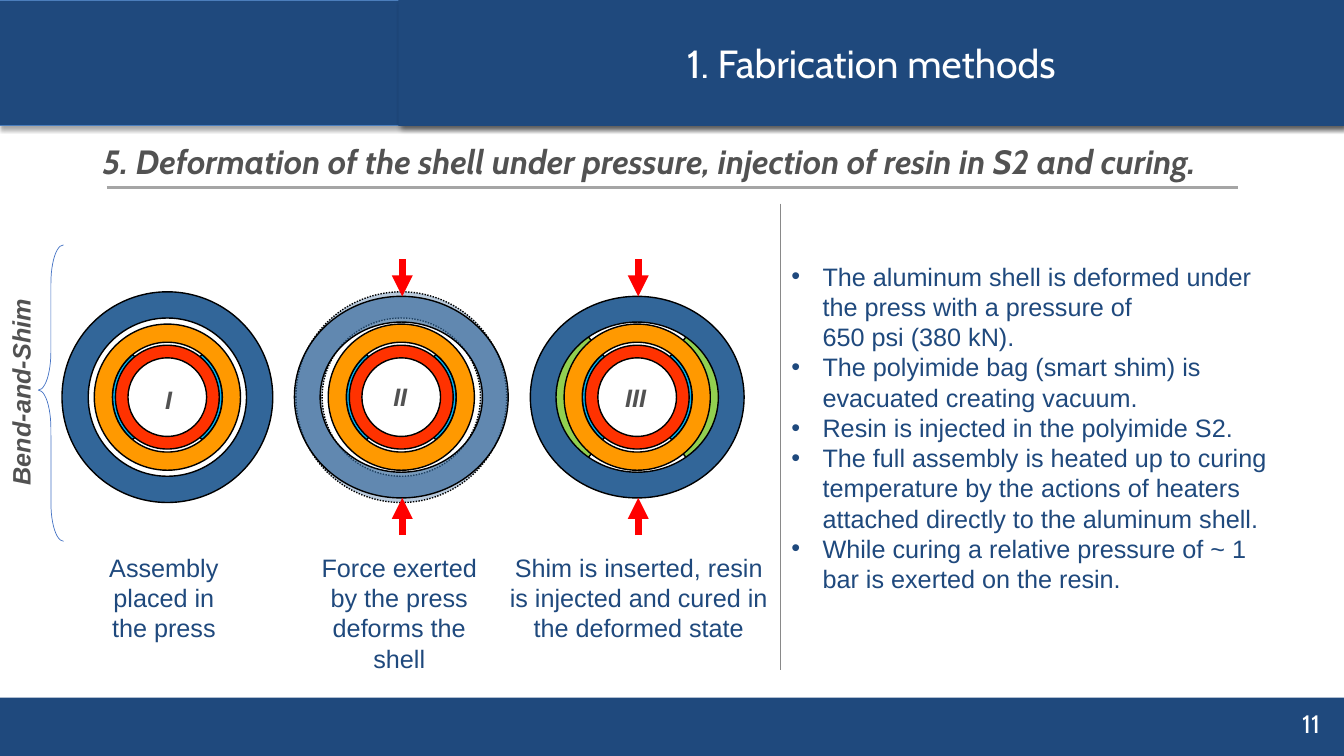
import math

import lxml.etree
import pptx
import pptx.dml.color
import pptx.enum.dml
import pptx.enum.shapes
import pptx.enum.text
import pptx.oxml.ns
import pptx.util

NAVY = pptx.dml.color.RGBColor(0x1F, 0x49, 0x7D)
HEADER_EDGE = pptx.dml.color.RGBColor(0x4B, 0x7E, 0xBC)
BRACE_BLUE = pptx.dml.color.RGBColor(0x44, 0x72, 0xC4)
SHELL_BLUE = pptx.dml.color.RGBColor(0x32, 0x66, 0x99)
SHIM_BLUE = pptx.dml.color.RGBColor(0x00, 0xB0, 0xF0)
SHIM_GREEN = pptx.dml.color.RGBColor(0x92, 0xD0, 0x50)
ORANGE = pptx.dml.color.RGBColor(0xFF, 0x99, 0x00)
CORE_RED = pptx.dml.color.RGBColor(0xFF, 0x32, 0x00)
ARROW_RED = pptx.dml.color.RGBColor(0xFF, 0x00, 0x00)
DARK_GRAY = pptx.dml.color.RGBColor(0x52, 0x52, 0x52)
RULE_GRAY = pptx.dml.color.RGBColor(0xA5, 0xA5, 0xA5)
DIVIDER_GRAY = pptx.dml.color.RGBColor(0x89, 0x89, 0x89)
WHITE = pptx.dml.color.RGBColor(0xFF, 0xFF, 0xFF)
BLACK = pptx.dml.color.RGBColor(0x00, 0x00, 0x00)

ALIGN = pptx.enum.text.PP_ALIGN
ANCHOR = pptx.enum.text.MSO_ANCHOR
PRESET = pptx.enum.shapes.MSO_SHAPE
tag = pptx.oxml.ns.qn

deck = pptx.Presentation()
deck.slide_width = pptx.util.Inches(13.33)
deck.slide_height = pptx.util.Inches(7.5)
page = deck.slides.add_slide(deck.slide_layouts[6])
shapes = page.shapes
cell = deck.slide_height / 75


def paint(shape, fill=None, line=None, width=1, alpha=100):
    shape.shadow.inherit = False
    if fill is None:
        shape.fill.background()
    else:
        shape.fill.solid()
        shape.fill.fore_color.rgb = fill
        if alpha < 100:
            color = shape._element.spPr.find(tag("a:solidFill"))[0]
            lxml.etree.SubElement(color, tag("a:alpha"), val=str(alpha * 1000))
    if line is None:
        shape.line.fill.background()
    else:
        shape.line.color.rgb = line
        shape.line.width = pptx.util.Pt(width)
    return shape


def write(box, lines, color, style, align=ALIGN.CENTER, anchor=ANCHOR.TOP, bullet=None):
    frame = box.text_frame
    frame.word_wrap = True
    frame.vertical_anchor = anchor
    for index, line in enumerate(lines):
        para = frame.add_paragraph() if index else frame.paragraphs[0]
        para.text = line
        para.alignment = align
        if bullet:
            settings = para._p.get_or_add_pPr()
            settings.set("marL", str(round(3.1 * cell)))
            settings.set("indent", str(round(-3.1 * cell)))
            lxml.etree.SubElement(settings, tag("a:buFont"), typeface="Arial")
            lxml.etree.SubElement(settings, tag("a:buChar"), char=bullet)
        for span in para.runs:
            span.font.color.rgb = color
            for name, value in style.items():
                setattr(span.font, name, value)


BODY = {"name": "Arial", "size": pptx.util.Pt(18)}
LABEL = {**BODY, "bold": True, "italic": True}
HEADING = {"name": "Cabin", "size": pptx.util.Pt(24), "bold": True, "italic": True}
TITLE = {"name": "Cabin", "size": pptx.util.Pt(28)}
NUMBER = {"name": "Cabin", "size": pptx.util.Pt(18)}

bands = []
for left, top, width, height, edge, shadow in [
    (0, 69.2, 133.3, 5.8, None, None),
    (0, 0, 133.3, 12.5, HEADER_EDGE, (35, 3.1, 1.8, 90)),
    (39.5, 0, 93.8, 12.5, None, (43, 4, 3, 45)),
]:
    area = [round(value * cell) for value in (left, top, width, height)]
    band = paint(shapes.add_shape(PRESET.RECTANGLE, *area), NAVY, edge, 0.75)
    bands.append(band)
    if shadow:
        opacity, blur, distance, angle = shadow
        effects = band._element.spPr.find(tag("a:effectLst"))
        outer = lxml.etree.SubElement(
            effects, tag("a:outerShdw"), blurRad=str(pptx.util.Pt(blur)),
            dist=str(pptx.util.Pt(distance)), dir=str(angle * 60000),
            algn="t", rotWithShape="0")
        black = lxml.etree.SubElement(outer, tag("a:srgbClr"), val="000000")
        lxml.etree.SubElement(black, tag("a:alpha"), val=str(opacity * 1000))
write(bands[-1], ["1. Fabrication methods"], WHITE, TITLE, anchor=ANCHOR.MIDDLE)

axis = 39.4
stages = [
    {"center": 16.6, "shells": [(20.9, 20.9, 2.6, 100, False)]},
    {"center": 39.8, "pressed": True,
     "shells": [(20.9, 20.9, 2.6, 34, True), (21.2, 20, 2.55, 65, False)]},
    {"center": 63.2, "pressed": True, "resin": True,
     "shells": [(21.2, 20, 2.55, 100, False)]},
]
lines = [
    (10.6, 18.6, 122.8, 18.6, RULE_GRAY, 2, False),
    (77.4, 20.2, 77.4, 66.5, DIVIDER_GRAY, 0.75, False),
]
for stage in stages:
    center = stage["center"]
    shims = [(5.1, 5.45, SHIM_BLUE)]
    if stage.get("resin"):
        shims.insert(0, (6.4, 8.6, SHIM_GREEN))
    for inner, outer, color in shims:
        for side in (-1, 1):
            sweep = range(-51, 52, 3)
            outline = [(outer, angle) for angle in sweep]
            outline += [(inner, angle) for angle in reversed(sweep)]
            points = [
                ((center + side * radius * math.cos(math.radians(angle))) * cell,
                 (axis + radius * math.sin(math.radians(angle))) * cell)
                for radius, angle in outline
            ]
            builder = shapes.build_freeform(*points[0])
            builder.add_line_segments(points[1:], close=True)
            paint(builder.convert_to_shape(), color, BLACK)
    rings = [(*shell[:3], SHELL_BLUE, *shell[3:]) for shell in stage["shells"]]
    rings[1:1] = [(14.5, 14.5, 1.8, ORANGE, 100, False),
                  (10.3, 10.3, 1.25, CORE_RED, 100, False)]
    if stage.get("resin"):
        rings.append(rings.pop(0))
    for width, height, thickness, color, alpha, dotted in rings:
        area = [round(value * cell) for value in
                (center - width / 2, axis - height / 2, width, height)]
        ring = paint(shapes.add_shape(PRESET.DONUT, *area), color, BLACK, 1, alpha)
        ring.adjustments[0] = thickness / min(width, height)
        if dotted:
            ring.line.dash_style = pptx.enum.dml.MSO_LINE.ROUND_DOT
    if stage.get("pressed"):
        for side in (-1, 1):
            lines.append((center + 0.1, axis + side * 13.7, center + 0.1,
                          axis + side * 10, ARROW_RED, 5, True))

for *ends, color, width, arrow in lines:
    ends = [round(value * cell) for value in ends]
    line = shapes.add_connector(pptx.enum.shapes.MSO_CONNECTOR.STRAIGHT, *ends)
    line.line.color.rgb = color
    line.line.width = pptx.util.Pt(width)
    if arrow:
        lxml.etree.SubElement(line.line._get_or_add_ln(), tag("a:tailEnd"), type="triangle")
    lxml.etree.SubElement(line._element.spPr, tag("a:effectLst"))

area = [round(value * cell) for value in (3.8, 24.3, 2.5, 29.4)]
brace = paint(shapes.add_shape(PRESET.LEFT_BRACE, *area), None, BRACE_BLUE, 0.5)
brace.adjustments[0] = 1.52
brace.adjustments[1] = 0.49

steps = [
    "The aluminum shell is deformed under the press with a pressure of\n650 psi (380 kN).",
    "The polyimide bag (smart shim) is evacuated creating vacuum.",
    "Resin is injected in the polyimide S2.",
    "The full assembly is heated up to curing temperature by the actions of heaters "
    "attached directly to the aluminum shell.",
    "While curing a relative pressure of ~ 1 bar is exerted on the resin.",
]
heading = "5. Deformation of the shell under pressure, injection of resin in S2 and curing."
middle = {"anchor": ANCHOR.MIDDLE, "align": ALIGN.RIGHT}
left_side = {"align": ALIGN.LEFT}
for area, content, color, style, layout in [
    ((124.4, 69.8, 7.5, 4), ["11"], WHITE, NUMBER, middle),
    ((9.2, 13.5, 116.8, 9.1), [heading], DARK_GRAY, HEADING, left_side),
    ((8.3, 54.3, 15.9, 10.1), ["Assembly placed in the press"], NAVY, BODY, {}),
    ((30.4, 54.3, 18.4, 13.1), ["Force exerted by the press deforms the shell"], NAVY, BODY, {}),
    ((49.3, 54.3, 28.1, 10.1),
     ["Shim is inserted, resin is injected and cured in the deformed state"], NAVY, BODY, {}),
    ((77.5, 25.4, 51.2, 34.3), steps, NAVY, BODY, {"bullet": "•", **left_side}),
    ((15.4, 37.6, 2.4, 3), ["I"], DARK_GRAY, LABEL, {}),
    ((37.7, 37.3, 4, 4), ["II"], DARK_GRAY, LABEL, {}),
    ((60.5, 37.4, 5.1, 4), ["III"], DARK_GRAY, LABEL, {}),
    ((-10, 37.4, 23.1, 3), ["Bend-and-Shim"], DARK_GRAY, LABEL, {}),
]:
    box = shapes.add_textbox(*[round(value * cell) for value in area])
    write(box, content, color, style, **layout)
    if content == ["Bend-and-Shim"]:
        box.rotation = 270

deck.save("out.pptx")
